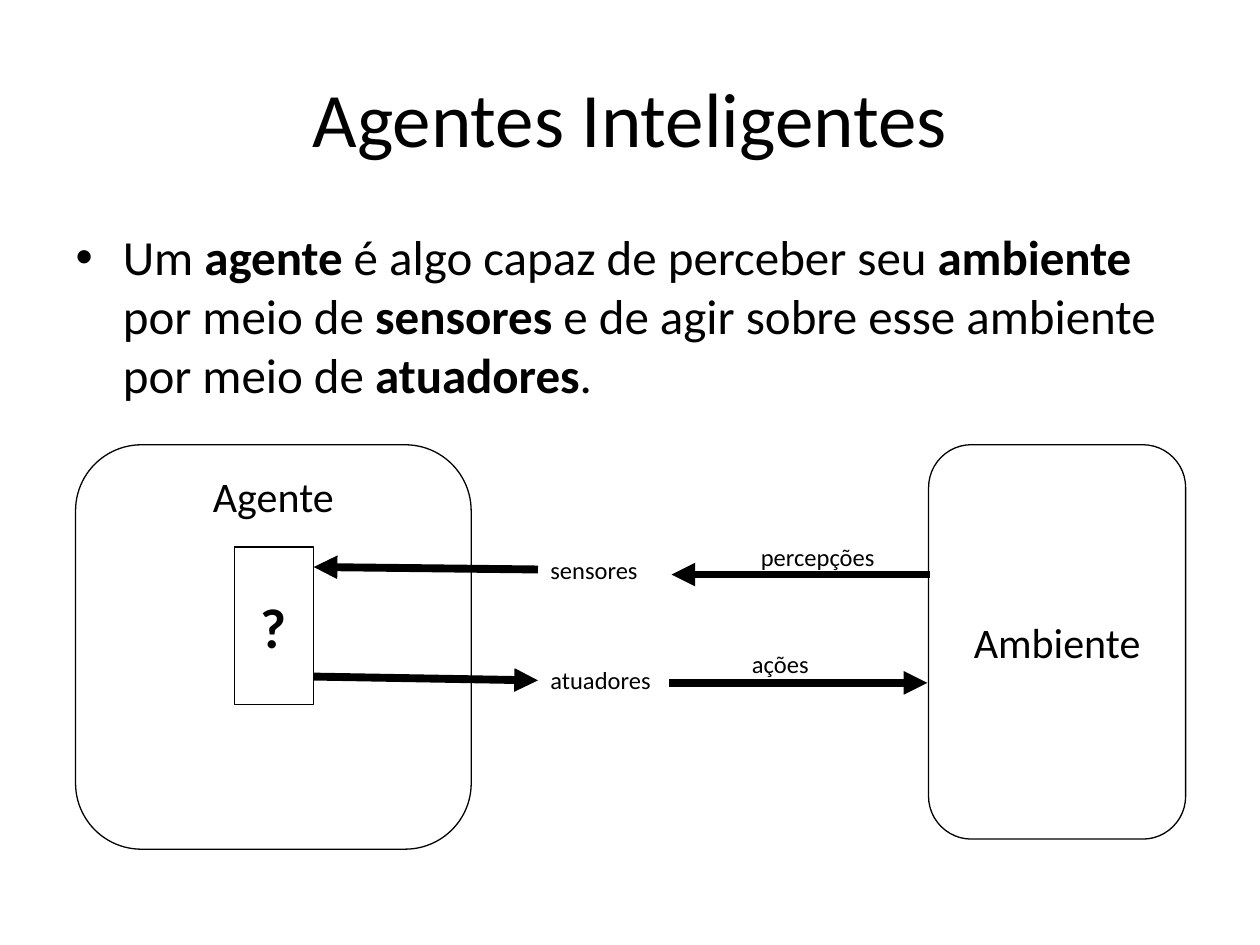
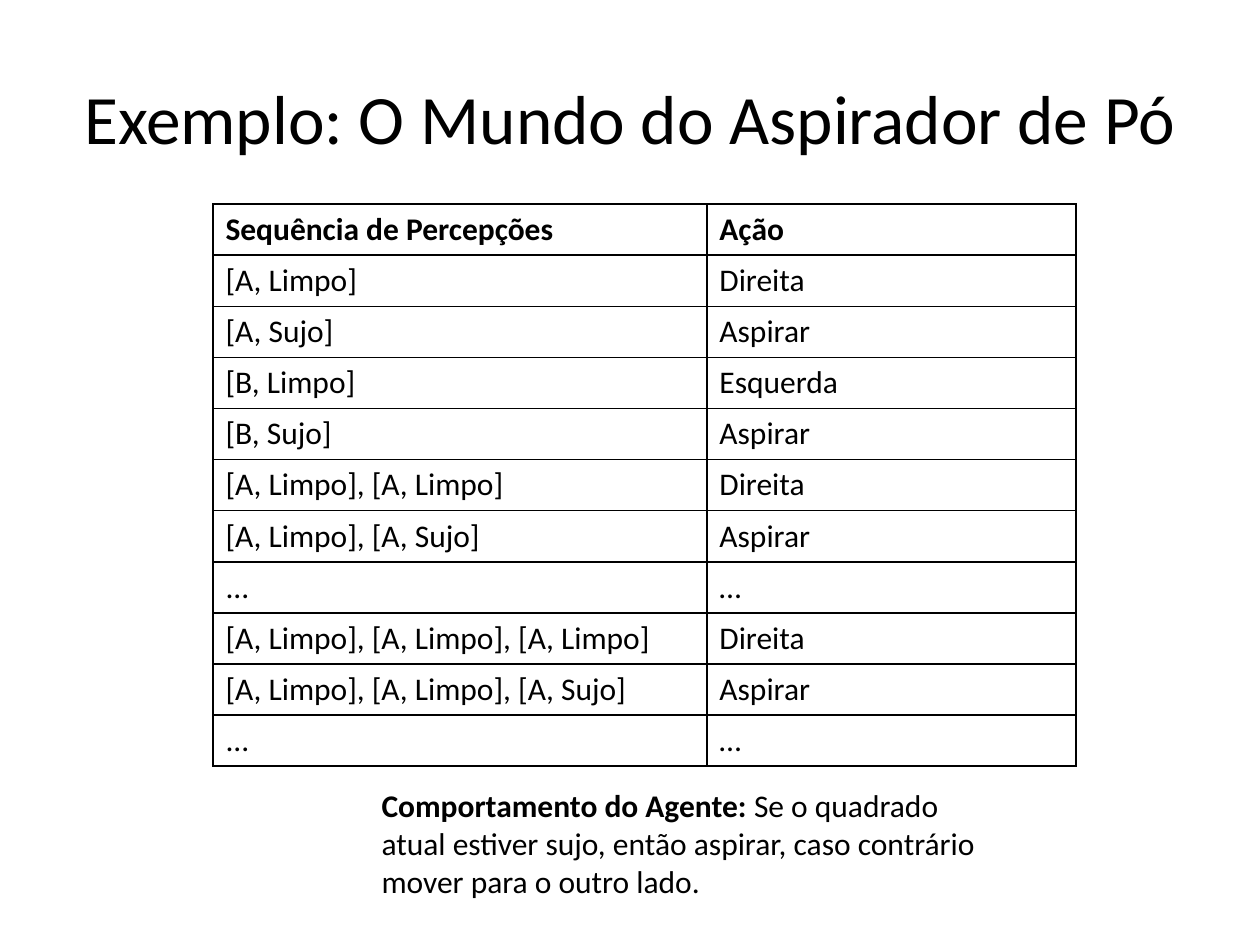
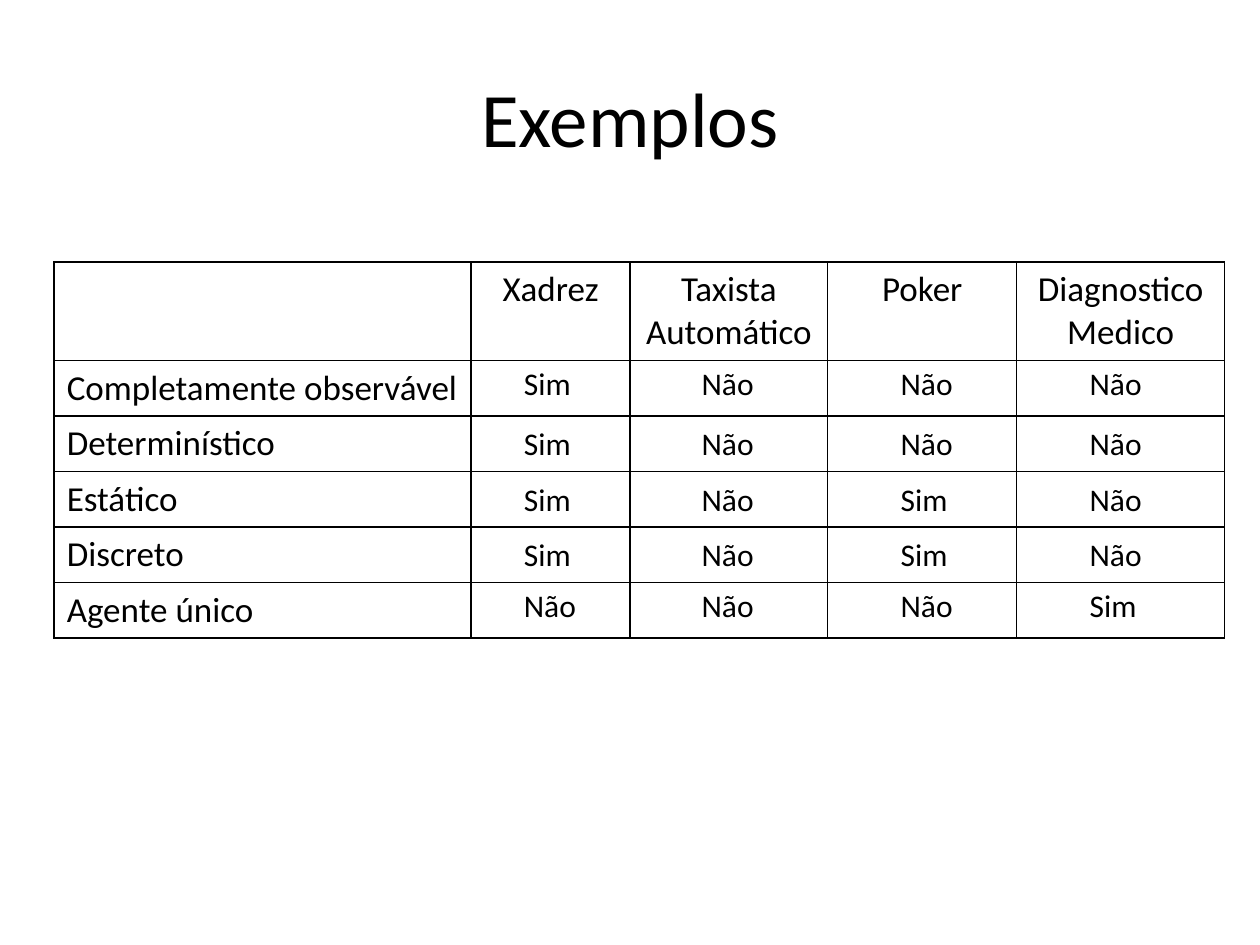
"""Build three slides on intelligent agents, their environment and examples."""
from dataclasses import dataclass
from itertools import accumulate

from lxml import etree
from pptx import Presentation
from pptx import util as u
from pptx.dml.color import RGBColor
from pptx.enum import shapes, text
from pptx.oxml import ns

PX = 9144
FONT = "Calibri"
INK = "000000"
LEFT, CENTER = text.PP_ALIGN.LEFT, text.PP_ALIGN.CENTER
TOP, MIDDLE = text.MSO_ANCHOR.TOP, text.MSO_ANCHOR.MIDDLE
RECT, ROUNDED = shapes.MSO_SHAPE.RECTANGLE, shapes.MSO_SHAPE.ROUNDED_RECTANGLE


@dataclass(frozen=True)
class Box:
    left: int
    top: int
    width: int
    height: int

    def emu(self) -> list:
        return px(self.left, self.top, self.width, self.height)


@dataclass(frozen=True)
class Block:
    words: str
    box: Box
    preset: int
    size: int
    anchor: int


@dataclass(frozen=True)
class Label:
    words: str
    box: Box
    size: int = 14
    wrap: bool = True


@dataclass(frozen=True)
class Arrow:
    start: tuple
    end: tuple


@dataclass(frozen=True)
class Grid:
    left: int
    top: int
    columns: tuple
    row_heights: tuple
    rows: tuple
    size: int
    centered_header: bool = False


BLOCKS = (
    Block("Agente", Box(60, 353, 314, 321), ROUNDED, 24, TOP),
    Block("Ambiente", Box(737, 353, 204, 313), ROUNDED, 24, MIDDLE),
    Block("*?*", Box(186, 434, 63, 125), RECT, 32, MIDDLE),
)
ARROWS = (
    Arrow((738, 456), (533, 456)),
    Arrow((427, 452), (249, 450)),
    Arrow((249, 537), (427, 540)),
    Arrow((531, 542), (736, 542)),
)
LABELS = (
    Label("sensores", Box(427, 436, 104, 34)),
    Label("atuadores", Box(427, 523, 104, 34)),
    Label("percepções", Box(594, 425, 126, 34)),
    Label("ações", Box(587, 510, 110, 34)),
)
VACUUM_RULES = Grid(169, 162, (392, 293), (40,) * 11, (
    ("*Sequência de Percepções*", "*Ação*"),
    ("[A, Limpo]", "Direita"),
    ("[A, Sujo]", "Aspirar"),
    ("[B, Limpo]", "Esquerda"),
    ("[B, Sujo]", "Aspirar"),
    ("[A, Limpo], [A, Limpo]", "Direita"),
    ("[A, Limpo], [A, Sujo]", "Aspirar"),
    ("...", "…"),
    ("[A, Limpo], [A, Limpo], [A, Limpo]", "Direita"),
    ("[A, Limpo], [A, Limpo], [A, Sujo]", "Aspirar"),
    ("...", "…"),
), 18)
BEHAVIOUR = Label(
    "*Comportamento do Agente: *Se o quadrado atual estiver sujo, então aspirar, "
    "caso contrário mover para o outro lado.", Box(293, 619, 506, 101), 18)
TASKS = ("", "Xadrez", "Taxista Automático", "Poker", "Diagnostico Medico")
PROPERTIES = ("Completamente observável", "Determinístico", "Estático",
              "Discreto", "Agente único")
ENVIRONMENTS = Grid(
    43, 208, (331, 126, 157, 150, 165), (77,) + (43,) * 5,
    (TASKS, *((name, "", "", "", "") for name in PROPERTIES)), 20, True)
ANSWERS = {
    406: ("Sim", "Sim", "Sim", "Sim", "Não"),
    547: ("Não", "Não", "Não", "Não", "Não"),
    705: ("Não", "Não", "Sim", "Sim", "Não"),
    855: ("Não", "Não", "Não", "Não", "Sim"),
}
ANSWER_TOPS = tuple(accumulate((284, 48, 44, 44, 40)))
ANSWER_WIDTHS = {"Sim": 58, "Não": 62}


def px(*lengths: int) -> list:
    return [u.Emu(length * PX) for length in lengths]


def color(code: str) -> RGBColor:
    return RGBColor.from_string(code)


def write(frame, words: str, size: float, align=LEFT) -> None:
    """Write one paragraph, with the parts between asterisks in bold."""
    paragraph = frame.paragraphs[0]
    paragraph.alignment = align
    paragraph.space_before = u.Pt(0)
    for index, part in enumerate(words.split("*")):
        if part:
            run = paragraph.add_run()
            run.text = part
            if index % 2:
                run.font.bold = True
    font = paragraph.font
    font.name, font.size = FONT, u.Pt(size)
    font.color.rgb = color(INK)


def add_titled_slide(deck, layout: int, title: str, size: float = 44):
    slide = deck.slides.add_slide(deck.slide_layouts[layout])
    heading = slide.shapes.title
    heading.left, heading.top, heading.width, heading.height = Box(50, 30, 900, 125).emu()
    frame = heading.text_frame
    frame.auto_size = text.MSO_AUTO_SIZE.NONE
    frame.vertical_anchor = MIDDLE
    write(frame, title, size, CENTER)
    return slide


def add_definition(slide, words: str) -> None:
    body = slide.placeholders[1]
    body.left, body.top, body.width, body.height = Box(50, 175, 900, 495).emu()
    body.text_frame.auto_size = text.MSO_AUTO_SIZE.NONE
    write(body.text_frame, words, 28)


def add_block(slide, block: Block) -> None:
    shape = slide.shapes.add_shape(block.preset, *block.box.emu())
    shape.shadow.inherit = False
    shape.fill.background()
    shape.line.color.rgb = color(INK)
    shape.line.width = u.Pt(0.75)
    shape.text_frame.vertical_anchor = block.anchor
    write(shape.text_frame, block.words, block.size, CENTER)


def add_label(slide, label: Label) -> None:
    frame = slide.shapes.add_textbox(*label.box.emu()).text_frame
    frame.word_wrap = label.wrap
    frame.auto_size = text.MSO_AUTO_SIZE.SHAPE_TO_FIT_TEXT
    write(frame, label.words, label.size)


def add_arrow(slide, arrow: Arrow) -> None:
    connector = slide.shapes.add_connector(
        shapes.MSO_CONNECTOR.STRAIGHT, *px(*arrow.start, *arrow.end))
    connector.line.color.rgb = color(INK)
    connector.line.width = u.Pt(4.5)
    etree.SubElement(connector.line._get_or_add_ln(), ns.qn("a:tailEnd"), type="triangle")
    etree.SubElement(connector._element.spPr, ns.qn("a:effectLst"))


def add_borders(cell) -> None:
    properties = cell._tc.get_or_add_tcPr()
    for position, side in enumerate(("lnL", "lnR", "lnT", "lnB")):
        border = etree.Element(ns.qn(f"a:{side}"), w=str(u.Pt(1)))
        fill = etree.SubElement(border, ns.qn("a:solidFill"))
        etree.SubElement(fill, ns.qn("a:srgbClr"), val=INK)
        properties.insert(position, border)


def add_grid(slide, grid: Grid) -> None:
    box = Box(grid.left, grid.top, sum(grid.columns), sum(grid.row_heights))
    table = slide.shapes.add_table(len(grid.rows), len(grid.columns), *box.emu()).table
    table.first_row = table.horz_banding = False
    for column, width in zip(table.columns, px(*grid.columns)):
        column.width = width
    for row, height in zip(table.rows, px(*grid.row_heights)):
        row.height = height
    for row_index, entries in enumerate(grid.rows):
        align = CENTER if grid.centered_header and row_index == 0 else LEFT
        for column_index, words in enumerate(entries):
            cell = table.cell(row_index, column_index)
            cell.fill.background()
            add_borders(cell)
            write(cell.text_frame, words, grid.size, align)


def add_answers(slide) -> None:
    for left, answers in ANSWERS.items():
        for top, answer in zip(ANSWER_TOPS, answers):
            box = Box(left, top, ANSWER_WIDTHS[answer], 40)
            add_label(slide, Label(answer, box, 18, False))


def main() -> None:
    deck = Presentation()
    deck.slide_width, deck.slide_height = px(1000, 750)

    agents = add_titled_slide(deck, 1, "Agentes Inteligentes")
    add_definition(agents, "Um *agente* é algo capaz de perceber seu *ambiente* por meio de "
                           "*sensores* e de agir sobre esse ambiente por meio de *atuadores*.")
    for block in BLOCKS:
        add_block(agents, block)
    for arrow in ARROWS:
        add_arrow(agents, arrow)
    for label in LABELS:
        add_label(agents, label)

    vacuum = add_titled_slide(deck, 5, "Exemplo: O Mundo do Aspirador de Pó", 39.6)
    add_grid(vacuum, VACUUM_RULES)
    add_label(vacuum, BEHAVIOUR)

    examples = add_titled_slide(deck, 5, "Exemplos")
    add_grid(examples, ENVIRONMENTS)
    add_answers(examples)

    deck.save("out.pptx")


if __name__ == "__main__":
    main()
